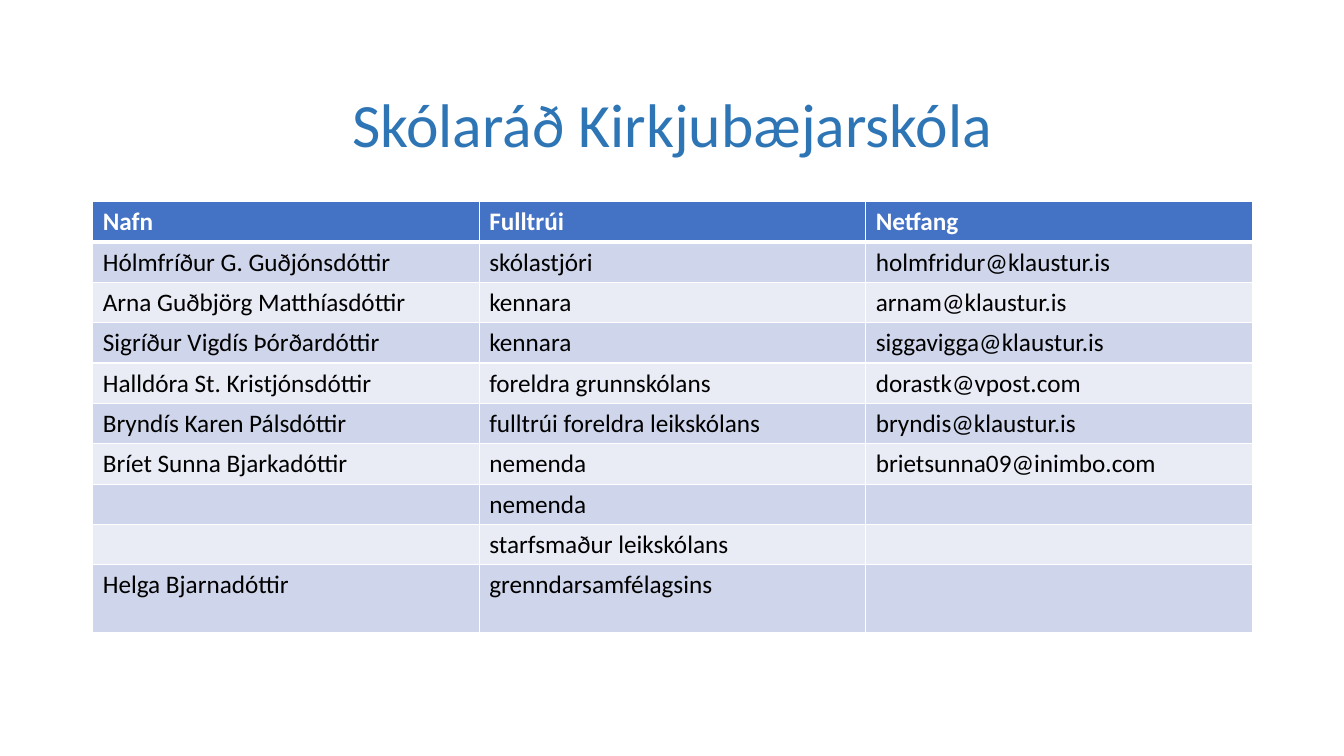
from lxml import etree
from pptx import Presentation, util as u
from pptx.dml.color import RGBColor
from pptx.enum import text
from pptx.oxml.ns import qn

THEME = {
    "font": "Calibri", "title_size": 44, "table_size": 18,
    "title": "2E75B6", "header": "4472C4", "bands": ("CFD5EA", "E9EBF5"),
    "light": "FFFFFF", "dark": "000000", "thin": 1, "thick": 3,
}
LEFT, WIDTH = 0.92, 11.5
ROW_HEIGHT, LAST_ROW_HEIGHT, TABLE_HEIGHT = 0.39, 0.67, 4.3
MEMBERS = [
    ("Nafn", "Fulltrúi", "Netfang"),
    ("Hólmfríður G. Guðjónsdóttir", "skólastjóri", "holmfridur@klaustur.is"),
    ("Arna Guðbjörg Matthíasdóttir", "kennara", "arnam@klaustur.is"),
    ("Sigríður Vigdís Þórðardóttir", "kennara", "siggavigga@klaustur.is"),
    ("Halldóra St. Kristjónsdóttir", "foreldra grunnskólans", "dorastk@vpost.com"),
    ("Bryndís Karen Pálsdóttir", "fulltrúi foreldra leikskólans", "bryndis@klaustur.is"),
    ("Bríet Sunna Bjarkadóttir", "nemenda", "brietsunna09@inimbo.com"),
    ("", "nemenda", ""),
    ("", "starfsmaður leikskólans", ""),
    ("Helga Bjarnadóttir", "grenndarsamfélagsins", ""),
]


def write(frame, words, *, size, color, bold=False, align=None, spacing=None):
    paragraph = frame.paragraphs[0]
    paragraph.alignment = align
    paragraph.line_spacing = spacing
    if words:
        run = paragraph.add_run()
        run.text = words
        run.font.name = THEME["font"]
        run.font.size = u.Pt(size)
        run.font.bold = bold
        run.font.color.rgb = RGBColor.from_string(color)


def add_borders(cell, **widths):
    """Draw cell borders; widths are points keyed by side: L, R, T, B."""
    properties = cell._tc.get_or_add_tcPr()
    for position, side in enumerate("LRTB"):
        line = etree.Element(qn(f"a:ln{side}"), w=str(u.Pt(widths[side])))
        fill = etree.SubElement(line, qn("a:solidFill"))
        etree.SubElement(fill, qn("a:srgbClr"), val=THEME["light"])
        properties.insert(position, line)


presentation = Presentation()
presentation.slide_width = u.Inches(13.33)
presentation.slide_height = u.Inches(7.5)
slide = presentation.slides.add_slide(presentation.slide_layouts[6])

title = slide.shapes.add_textbox(
    u.Inches(LEFT), u.Inches(0.69), u.Inches(WIDTH), u.Inches(1.16))
title.text_frame.word_wrap = True
title.text_frame.vertical_anchor = text.MSO_ANCHOR.MIDDLE
write(title.text_frame, "Skólaráð Kirkjubæjarskóla", size=THEME["title_size"],
      color=THEME["title"], align=text.PP_ALIGN.CENTER, spacing=0.9)

table_shape = slide.shapes.add_table(
    len(MEMBERS), len(MEMBERS[0]), u.Inches(LEFT), u.Inches(2),
    u.Inches(WIDTH), u.Inches(TABLE_HEIGHT))
table = table_shape.table

for row_index, member in enumerate(MEMBERS):
    is_header = row_index == 0
    is_last = row_index == len(MEMBERS) - 1
    table.rows[row_index].height = u.Inches(LAST_ROW_HEIGHT if is_last else ROW_HEIGHT)
    fill = THEME["header"] if is_header else THEME["bands"][(row_index - 1) % 2]
    for cell, words in zip(table.rows[row_index].cells, member):
        cell.fill.solid()
        cell.fill.fore_color.rgb = RGBColor.from_string(fill)
        add_borders(cell, L=THEME["thin"], R=THEME["thin"],
                    T=THEME["thick"] if row_index == 1 else THEME["thin"],
                    B=THEME["thick"] if is_header else THEME["thin"])
        write(cell.text_frame, words, size=THEME["table_size"], bold=is_header,
              color=THEME["light"] if is_header else THEME["dark"])
table_shape.height = u.Inches(TABLE_HEIGHT)

presentation.save("out.pptx")
